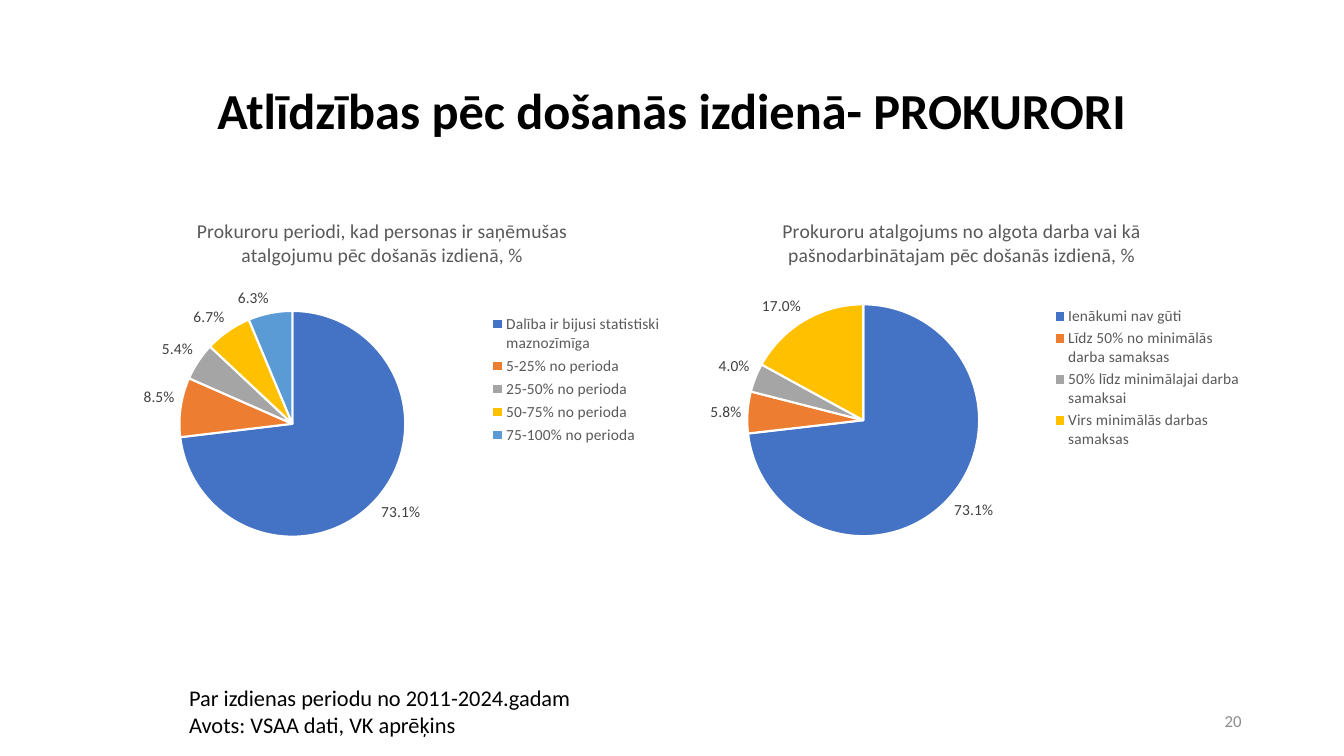
from pptx import Presentation
from pptx.chart.data import CategoryChartData
from pptx.dml.color import RGBColor
from pptx.enum.chart import XL_CHART_TYPE, XL_LABEL_POSITION, XL_LEGEND_POSITION
from pptx.enum.text import MSO_ANCHOR, PP_ALIGN
from pptx.oxml import parse_xml
from pptx.oxml.ns import nsdecls
from pptx.util import Pt

FACE = "Calibri"
BLACK = RGBColor(0x00, 0x00, 0x00)
WHITE = RGBColor(0xFF, 0xFF, 0xFF)
GREY = RGBColor(0x59, 0x59, 0x59)
DARK = RGBColor(0x40, 0x40, 0x40)
PALE = RGBColor(0x8C, 0x8C, 0x8C)
HUES = [
    RGBColor(0x44, 0x72, 0xC4),
    RGBColor(0xED, 0x7D, 0x31),
    RGBColor(0xA5, 0xA5, 0xA5),
    RGBColor(0xFF, 0xC0, 0x00),
    RGBColor(0x5B, 0x9B, 0xD5),
]

# Each pie: title, shares, plot box and legend box (fractions of the chart)
SPANS = (
    "Prokuroru periodi, kad personas ir saņēmušas atalgojumu pēc došanās izdienā, %",
    {
        "Dalība ir bijusi statistiski maznozīmīga": 0.731,
        "5-25% no perioda": 0.085,
        "25-50% no perioda": 0.054,
        "50-75% no perioda": 0.067,
        "75-100% no perioda": 0.063,
    },
    (0.15, 0.31, 0.39, 0.64),
    (0.68, 0.31, 0.31, 0.39),
)
PAY = (
    "Prokuroru atalgojums no algota darba vai kā pašnodarbinātajam pēc došanās izdienā, %",
    {
        "Ienākumi nav gūti": 0.731,
        "Līdz 50% no minimālās darba samaksas": 0.058,
        "50% līdz minimālajai darba samaksai": 0.04,
        "Virs minimālās darbas samaksas": 0.17,
    },
    (0.13, 0.29, 0.4, 0.66),
    (0.65, 0.29, 0.34, 0.42),
)


def style(font, size, color, bold=False):
    font.name = FACE
    font.size = Pt(size)
    font.bold = bold
    font.color.rgb = color


def write(frame, text, size, color, align, bold=False):
    frame.text = text
    for para in frame.paragraphs:
        para.alignment = align
        for run in para.runs:
            style(run.font, size, color, bold)


def layout(box, inner=False):
    """Return a manual chart layout for a box given in fractions."""
    target = '<c:layoutTarget val="inner"/>' if inner else ""
    modes = "".join(f'<c:{k}Mode val="edge"/>' for k in "xy")
    sizes = "".join(f'<c:{k} val="{v}"/>' for k, v in zip("xywh", box))
    return parse_xml(
        f'<c:layout {nsdecls("c")}><c:manualLayout>{target}{modes}{sizes}'
        "</c:manualLayout></c:layout>"
    )


def add_head(slide, x, y, w, h):
    title = slide.shapes.title
    title.left, title.top, title.width, title.height = Pt(x), Pt(y), Pt(w), Pt(h)
    frame = title.text_frame
    frame.vertical_anchor = MSO_ANCHOR.MIDDLE
    write(frame, "Atlīdzības pēc došanās izdienā- PROKURORI", 36, BLACK, PP_ALIGN.CENTER, True)
    frame.paragraphs[0].line_spacing = 0.9


def add_pie(slide, pie, x, y, w, h):
    name, shares, plot_box, key_box = pie
    data = CategoryChartData(number_format="0.0%")
    data.categories = list(shares)
    data.add_series("Series 1", list(shares.values()))
    chart = slide.shapes.add_chart(
        XL_CHART_TYPE.PIE, Pt(x), Pt(y), Pt(w), Pt(h), data
    ).chart
    style(chart.font, 10, BLACK)

    # Chart title
    chart.has_title = True
    write(chart.chart_title.text_frame, name, 14, GREY, PP_ALIGN.CENTER)

    # Legend
    chart.has_legend = True
    key = chart.legend
    key.position = XL_LEGEND_POSITION.RIGHT
    key.include_in_layout = False
    style(key.font, 11, GREY)
    for old in key._element.findall("{*}layout"):
        key._element.remove(old)
    key._element.find("{*}legendPos").addnext(layout(key_box))

    # Slices and their labels
    plot = chart.plots[0]
    plot.vary_by_categories = True
    for i, hue in enumerate(HUES[:len(shares)]):
        part = plot.series[0].points[i].format
        part.fill.solid()
        part.fill.fore_color.rgb = hue
        part.line.color.rgb = WHITE
        part.line.width = Pt(1.5)
    plot.has_data_labels = True
    marks = plot.data_labels
    marks.show_value = True
    marks.show_percentage = False
    marks.number_format = "0.0%"
    marks.number_format_is_linked = False
    marks.position = XL_LABEL_POSITION.OUTSIDE_END
    style(marks.font, 11, DARK)
    area = chart._chartSpace.chart.plotArea
    for old in area.findall("{*}layout"):
        area.remove(old)
    area.insert(0, layout(plot_box, True))


def add_note(slide, x, y, w, h):
    frame = slide.shapes.add_textbox(Pt(x), Pt(y), Pt(w), Pt(h)).text_frame
    frame.word_wrap = False
    text = "Par izdienas periodu no 2011-2024.gadam\nAvots: VSAA dati, VK aprēķins"
    write(frame, text, 16, BLACK, PP_ALIGN.LEFT)


def add_page(slide, x, y, w, h):
    frame = slide.shapes.add_textbox(Pt(x), Pt(y), Pt(w), Pt(h)).text_frame
    frame.word_wrap = True
    frame.vertical_anchor = MSO_ANCHOR.MIDDLE
    write(frame, "20", 12, PALE, PP_ALIGN.RIGHT)


def main():
    deck = Presentation()
    deck.slide_width, deck.slide_height = Pt(960), Pt(540)
    slide = deck.slides.add_slide(deck.slide_layouts[5])
    left, wide = 66, 828
    half = wide / 2
    add_head(slide, left, 28.75, wide, 104.5)
    add_page(slide, 678, 500.5, 216, 29)
    for i, pie in enumerate((SPANS, PAY)):
        add_pie(slide, pie, left + i * half, 144, half, 252)
    add_note(slide, 128, 485, 290, 46)
    deck.save("out.pptx")


if __name__ == "__main__":
    main()
